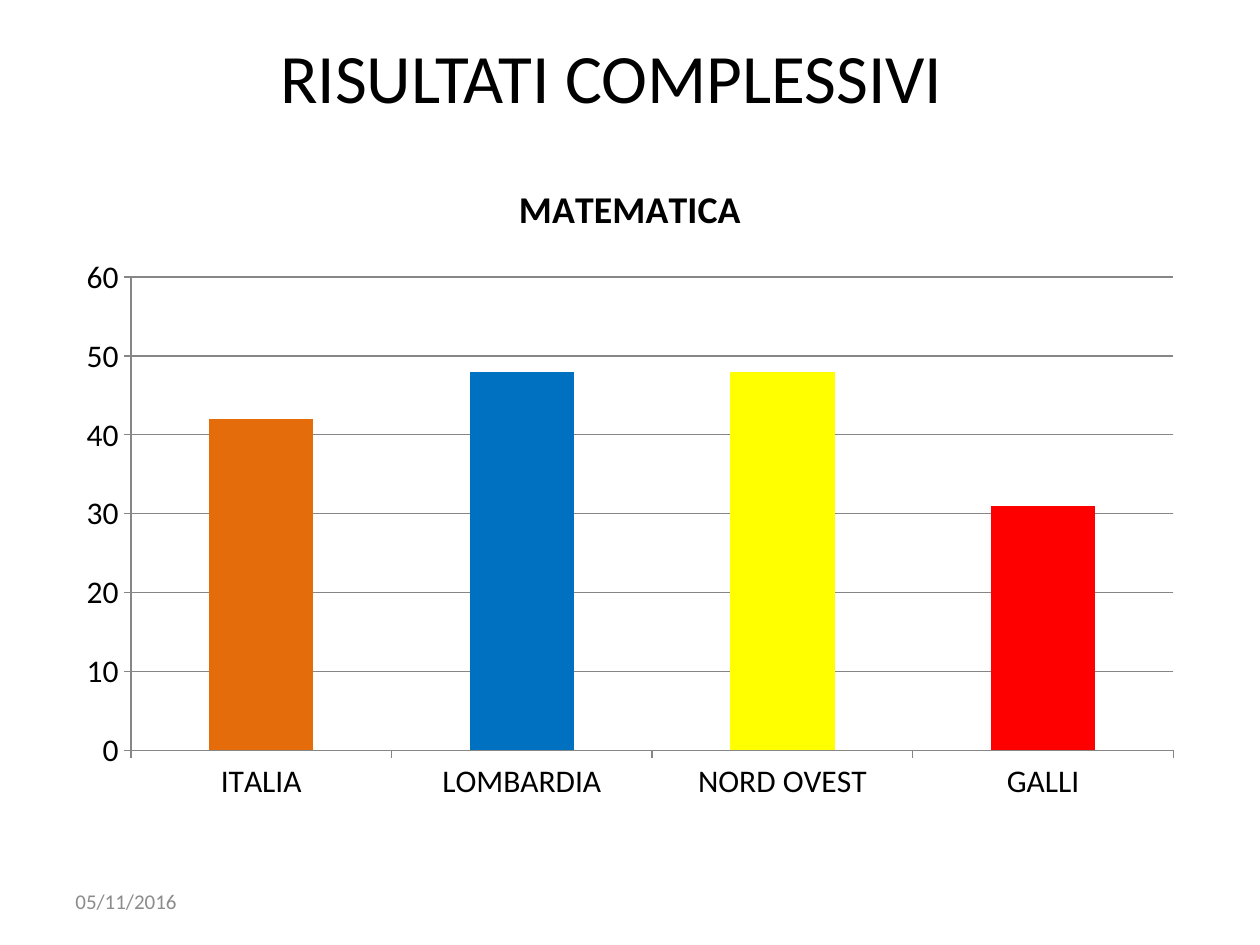
from dataclasses import dataclass

from pptx import Presentation
from pptx.chart.data import CategoryChartData
from pptx.dml.color import RGBColor
from pptx.enum.chart import XL_CHART_TYPE as ChartType, XL_TICK_MARK as Tick
from pptx.enum.text import MSO_ANCHOR as Anchor, PP_ALIGN as Align
from pptx.util import Pt

HEADING = "RISULTATI COMPLESSIVI "
SUBJECT = "MATEMATICA"
DATE = "05/11/2016"
RESULTS = [  # area, score, bar colour
    ("ITALIA", 42, "E46C0A"),
    ("LOMBARDIA", 48, "0070C0"),
    ("NORD OVEST", 48, "FFFF00"),
    ("GALLI", 31, "FF0000"),
]

# left, top, width, height in px
SLIDE_SIZE = (1260, 945)
HEADING_BOX = (84, 26, 1071, 100)
CHART_BOX = (64, 155, 1132, 659)
DATE_BOX = (63, 876, 294, 50)
PX_PER_INCH = 126


@dataclass(frozen=True)
class Theme:
    font: str = "Calibri"
    ink: str = "000000"
    muted: str = "8C8C8C"
    rule: str = "868686"
    series: str = "F79646"
    heading_size: float = 39.6
    subject_size: float = 21.6
    label_size: float = 18
    date_size: float = 12


THEME = Theme()


def emu(px):
    return round(px * 914400 / PX_PER_INCH)


def place(shape, box):
    shape.left, shape.top, shape.width, shape.height = map(emu, box)


def style_font(font, size, color=THEME.ink, bold=False):
    font.name, font.size, font.bold = THEME.font, Pt(size), bold
    font.color.rgb = RGBColor.from_string(color)


def write(frame, text, *, size, color=THEME.ink, bold=False, align=Align.LEFT):
    frame.word_wrap = True
    frame.vertical_anchor = Anchor.MIDDLE
    paragraph = frame.paragraphs[0]
    paragraph.alignment = align
    run = paragraph.add_run()
    run.text = text
    style_font(run.font, size, color, bold)


def paint(fill, color):
    fill.solid()
    fill.fore_color.rgb = RGBColor.from_string(color)


def draw_rule(line):
    line.width = Pt(0.75)
    line.color.rgb = RGBColor.from_string(THEME.rule)


def add_results_chart(slide):
    data = CategoryChartData(number_format="0")
    data.categories = [area for area, _, _ in RESULTS]
    data.add_series(SUBJECT, [score for _, score, _ in RESULTS])
    chart = slide.shapes.add_chart(
        ChartType.COLUMN_CLUSTERED, *map(emu, CHART_BOX), data
    ).chart
    style_font(chart.font, THEME.label_size)
    chart.has_legend = False
    chart.has_title = True
    write(chart.chart_title.text_frame, SUBJECT,
          size=THEME.subject_size, bold=True, align=Align.CENTER)
    chart.chart_title.include_in_layout = False

    scores = chart.value_axis
    scores.minimum_scale, scores.maximum_scale, scores.major_unit = 0, 60, 10
    scores.has_major_gridlines = True
    draw_rule(scores.major_gridlines.format.line)
    for axis in (chart.category_axis, scores):
        axis.major_tick_mark, axis.minor_tick_mark = Tick.OUTSIDE, Tick.NONE
        draw_rule(axis.format.line)

    plot = chart.plots[0]
    plot.gap_width = 150
    plot.vary_by_categories = False
    bars = plot.series[0]
    paint(bars.format.fill, THEME.series)
    for index, (_, _, color) in enumerate(RESULTS):
        paint(bars.points[index].format.fill, color)


def main():
    deck = Presentation()
    deck.slide_width, deck.slide_height = map(emu, SLIDE_SIZE)
    slide = deck.slides.add_slide(deck.slide_layouts[5])

    heading = slide.shapes.title
    place(heading, HEADING_BOX)
    write(heading.text_frame, HEADING, size=THEME.heading_size, align=Align.CENTER)

    add_results_chart(slide)

    date = slide.shapes.add_textbox(*map(emu, DATE_BOX))
    write(date.text_frame, DATE, size=THEME.date_size, color=THEME.muted)

    deck.save("out.pptx")


if __name__ == "__main__":
    main()
